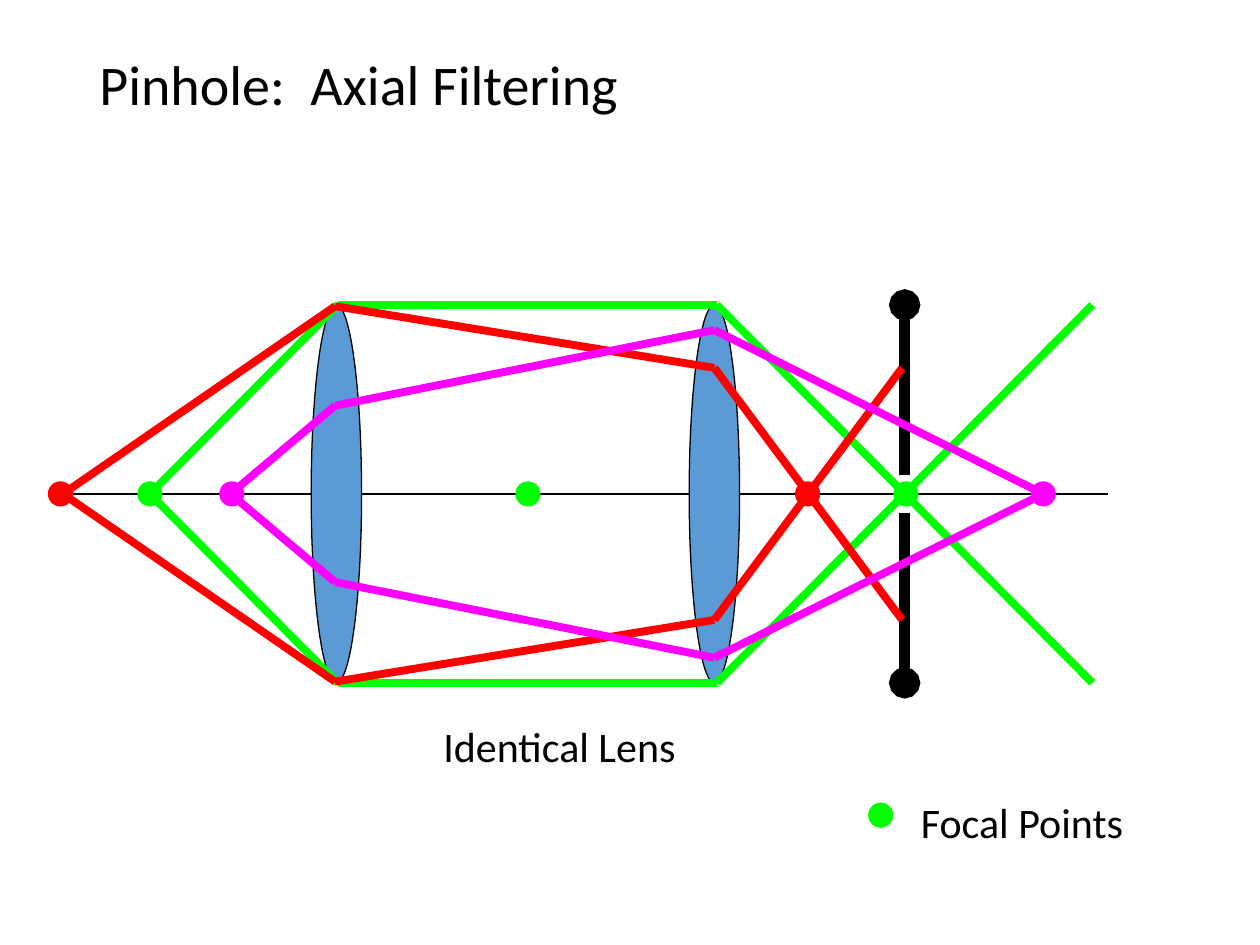
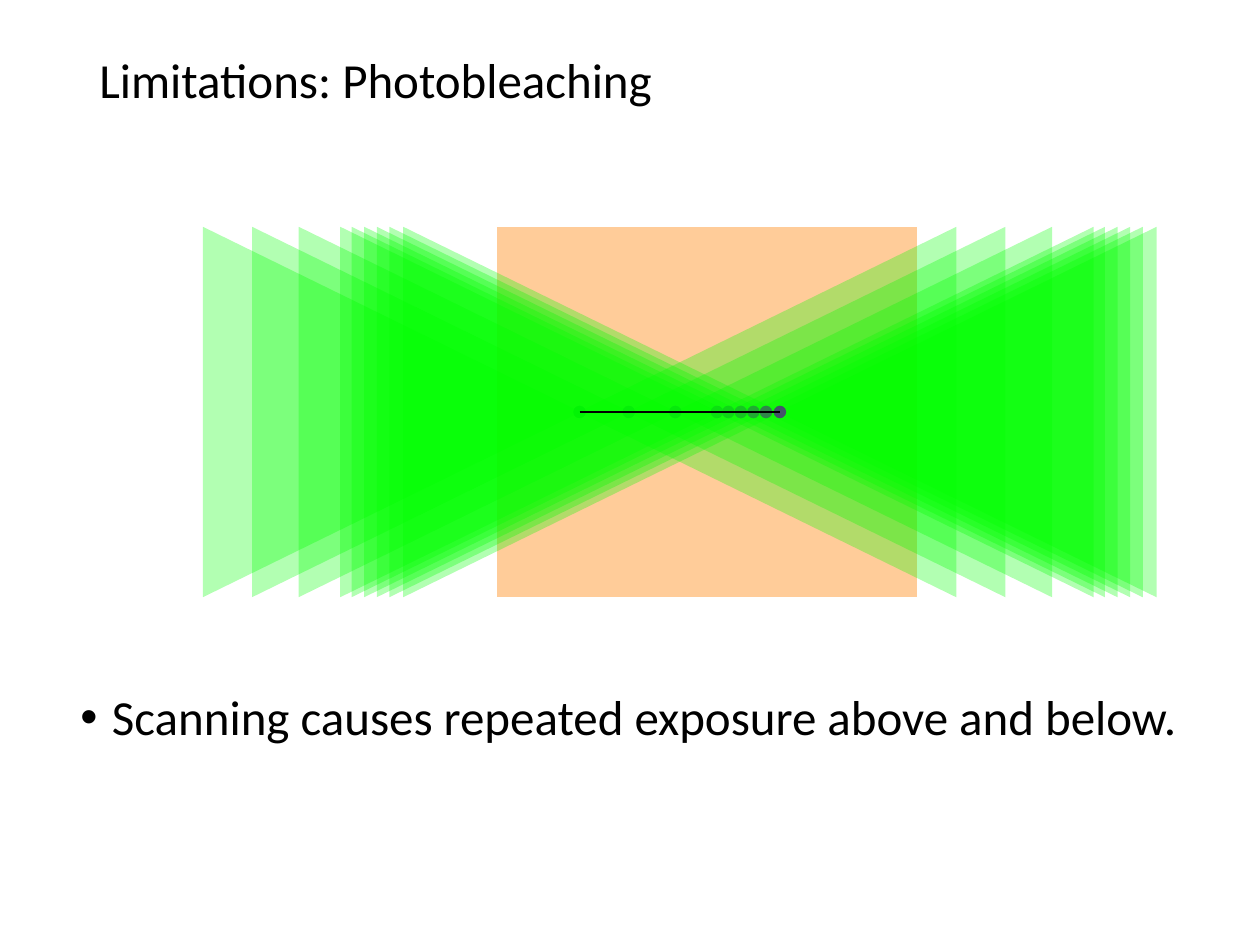
from lxml.etree import SubElement
from pptx import Presentation
from pptx.dml.color import RGBColor
from pptx.enum.shapes import MSO_CONNECTOR as Connector, MSO_SHAPE as Shape
from pptx.oxml.ns import qn
from pptx.util import Inches, Pt

FONT = "Calibri"
COLORS = {
    "ink": "000000", "paper": "FFFFFF", "lens": "5B9BD5", "green": "00FF00",
    "red": "FF0000", "magenta": "FF00FF", "sample": "FFCC99", "spot": "44546A",
}
TITLE_BOX = (0.69, 0.4, 8.62, 1.45)

AXIS_Y = 3.92
AXIS_ENDS = (8.79, 0.5)
LENS_CENTERS = (2.67, 5.67)
LENS_SIZE = (0.4, 3)
PINHOLE_X = 7.18
PINHOLE_GAP, PINHOLE_REACH = 0.15, 1.5
DOT = 0.2
RAYS = {
    "green": [(1.19, 0), (2.68, 1.5), (5.69, 1.5), (8.67, -1.5)],
    "red": [(0.5, 0), (2.66, 1.49), (5.67, 1), (7.16, -1)],
    "magenta": [(1.83, 0), (2.66, 0.7), (5.67, 1.3), (8.28, 0)],
}
SOURCE_DOTS = [("red", 0.48), ("green", 1.19), ("magenta", 1.84), ("green", 4.19), ("green", 7.19)]
IMAGE_DOTS = {"red": 6.41, "magenta": 8.28}
LEGEND_DOT = (6.99, 6.47)
LABELS = [("Focal Points", (7.21, 6.27, 1.82, 0.5)), ("Identical Lens", (3.42, 5.67, 2.07, 0.5))]

SCAN_Y = 3.27
SCAN_FOCI = [4.6, 4.99, 5.36, 5.69, 5.78, 5.88, 5.98, 6.08, 6.19]
CONE_BASE, CONE_LENGTH = 2.94, 3
CONE_OPACITY = 30
SPOT = 0.1
SAMPLE_CENTER, SAMPLE_SIZE = (5.61, SCAN_Y), (3.34, 2.94)
LIMITATION = "Scanning causes repeated exposure above and below."


def color(name):
    return RGBColor.from_string(COLORS[name])


def add_text(slide, text, box, size, wrap=False, spacing=None):
    text_box = slide.shapes.add_textbox(*map(Inches, box))
    text_box.text_frame.word_wrap = wrap
    text_box.text_frame.text = text
    paragraph = text_box.text_frame.paragraphs[0]
    if spacing:
        paragraph.line_spacing = spacing
    font = paragraph.runs[0].font
    font.name, font.size = FONT, Pt(size)
    font.color.rgb = color("ink")
    return paragraph


def add_title(slide, text, size):
    add_text(slide, text, TITLE_BOX, size, wrap=True, spacing=0.9)


def add_bullet(paragraph, indent):
    properties = paragraph._p.get_or_add_pPr()
    properties.set("marL", str(Inches(indent)))
    properties.set("indent", str(-Inches(indent)))
    SubElement(properties, qn("a:buFont"), typeface="Arial")
    SubElement(properties, qn("a:buChar"), char="•")


def add_centered(shapes, kind, center, size, fill, outline=None, rotation=0, opacity=None):
    (x, y), (width, height) = center, size
    shape = shapes.add_shape(kind, *map(Inches, (x - width / 2, y - height / 2, width, height)))
    shape.shadow.inherit = False
    shape.rotation = rotation
    shape.fill.solid()
    shape.fill.fore_color.rgb = color(fill)
    if opacity:
        choice = shape._element.spPr.find(f"{qn('a:solidFill')}/{qn('a:srgbClr')}")
        SubElement(choice, qn("a:alpha"), val=str(opacity * 1000))
    if outline:
        shape.line.color.rgb = color(outline)
        shape.line.width = Pt(0.75)
    else:
        shape.line.fill.background()


def add_dot(shapes, center, fill, diameter=DOT):
    add_centered(shapes, Shape.OVAL, center, (diameter, diameter), fill)


def add_line(shapes, start, end, stroke, width, tail=None):
    line = shapes.add_connector(Connector.STRAIGHT, *map(Inches, (*start, *end)))
    line.line.color.rgb = color(stroke)
    line.line.width = Pt(width)
    if tail:
        SubElement(line.line._get_or_add_ln(), qn("a:tailEnd"), type=tail)
    SubElement(line._element.spPr, qn("a:effectLst"))


def add_rays(slide, name):
    shapes = slide.shapes.add_group_shape().shapes
    for side in (-1, 1):
        points = [(x, AXIS_Y + side * height) for x, height in RAYS[name]]
        for start, end in zip(points, points[1:]):
            add_line(shapes, start, end, name, 4.5)
    if name in IMAGE_DOTS:
        add_dot(shapes, (IMAGE_DOTS[name], AXIS_Y), name)


def build_pinhole(slide):
    shapes = slide.shapes
    add_line(shapes, *[(x, AXIS_Y) for x in AXIS_ENDS], "ink", 1.5)
    for x in LENS_CENTERS:
        add_centered(shapes, Shape.OVAL, (x, AXIS_Y), LENS_SIZE, "lens", outline="ink")
    for side in (-1, 1):
        ends = [(PINHOLE_X, AXIS_Y + side * reach) for reach in (PINHOLE_GAP, PINHOLE_REACH)]
        add_line(shapes, *ends, "ink", 6, tail="oval")
    add_rays(slide, "green")
    for name, x in SOURCE_DOTS:
        add_dot(shapes, (x, AXIS_Y), name)
    add_rays(slide, "red")
    add_rays(slide, "magenta")
    add_dot(shapes, LEGEND_DOT, "green")
    for text, box in LABELS:
        add_text(slide, text, box, 24)
    add_title(slide, "Pinhole:  Axial Filtering", 32)


def build_photobleaching(slide):
    add_centered(slide.shapes, Shape.RECTANGLE, SAMPLE_CENTER, SAMPLE_SIZE, "sample", outline="paper")
    add_title(slide, "Limitations: Photobleaching", 28)
    paragraph = add_text(slide, LIMITATION, (0.54, 5.45, 9, 1.65), 28, wrap=True, spacing=0.9)
    paragraph.space_before = Pt(10)
    add_bullet(paragraph, 0.25)
    for focus in SCAN_FOCI:
        shapes = slide.shapes.add_group_shape().shapes
        for side, rotation in ((-1, 90), (1, 270)):
            center = (focus + side * (CONE_LENGTH / 2 - 0.01), SCAN_Y)
            add_centered(shapes, Shape.ISOSCELES_TRIANGLE, center, (CONE_BASE, CONE_LENGTH),
                         "green", rotation=rotation, opacity=CONE_OPACITY)
        add_dot(shapes, (focus, SCAN_Y), "spot", SPOT)
    add_line(slide.shapes, (SCAN_FOCI[0], SCAN_Y), (SCAN_FOCI[-1], SCAN_Y), "ink", 1.5)


def main():
    """Build the two microscopy slides."""
    presentation = Presentation()
    presentation.slide_width, presentation.slide_height = Inches(10), Inches(7.5)
    for build in (build_pinhole, build_photobleaching):
        build(presentation.slides.add_slide(presentation.slide_layouts[6]))
    presentation.save("out.pptx")


if __name__ == "__main__":
    main()
